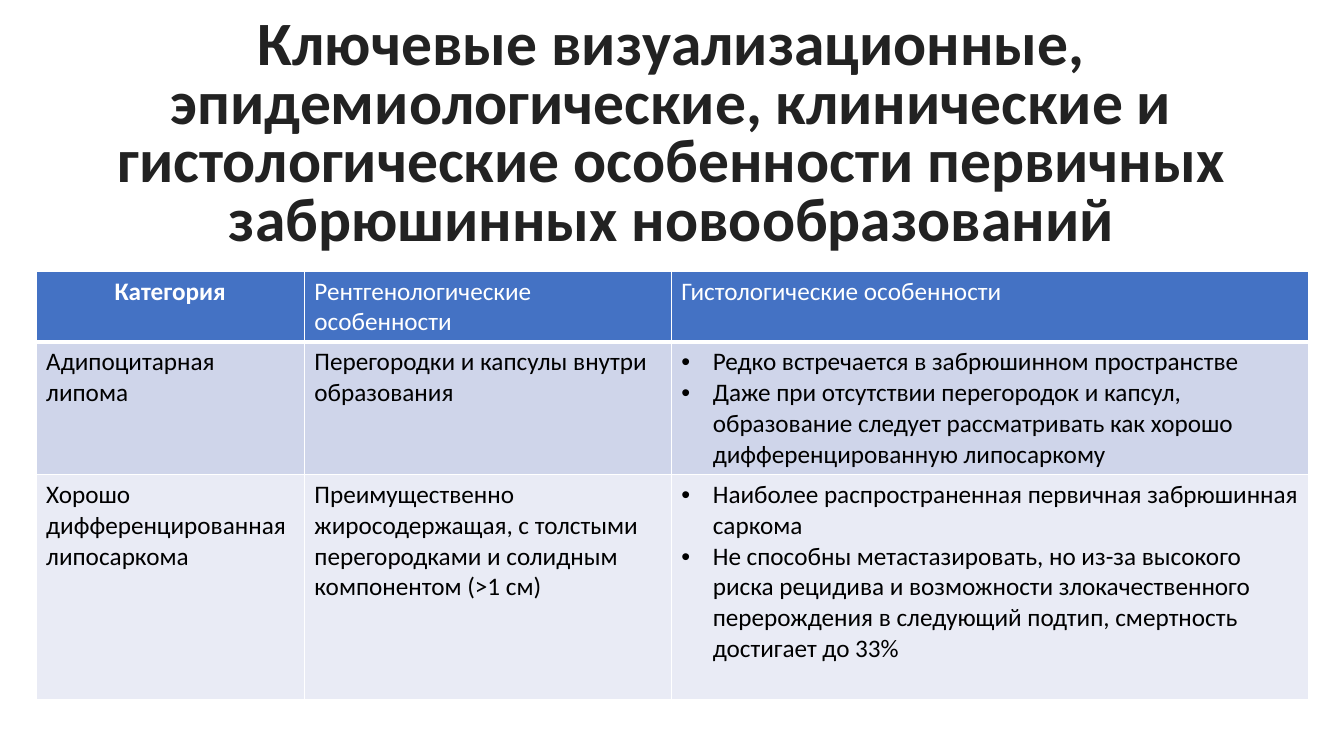
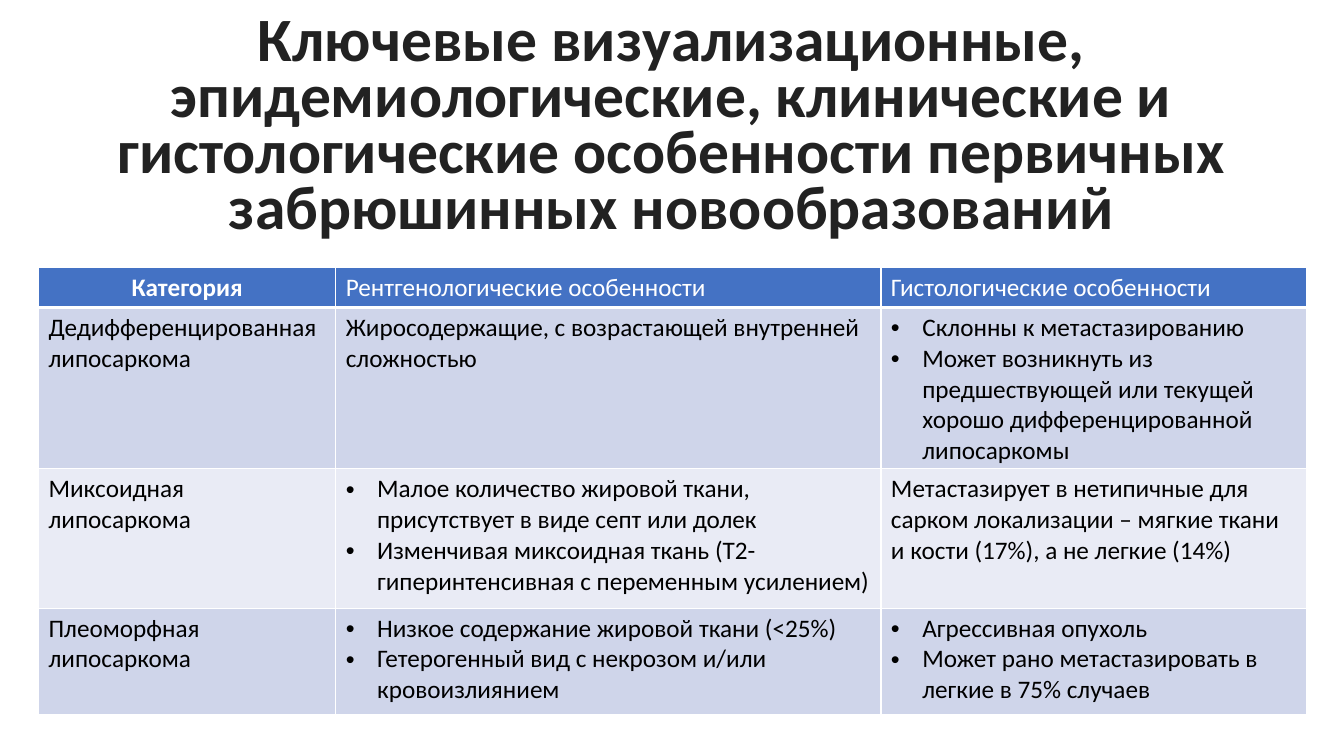
from dataclasses import dataclass

from lxml.etree import SubElement
from pptx import Presentation
from pptx.dml.color import RGBColor
from pptx.enum.text import MSO_ANCHOR, PP_ALIGN
from pptx.oxml.ns import qn
from pptx.util import Cm, Pt

# Shared look
FONT = "Calibri"
INK = RGBColor(0x22, 0x22, 0x22)
BLACK = RGBColor(0, 0, 0)
WHITE = RGBColor(0xFF, 0xFF, 0xFF)
BLUE = RGBColor(0x44, 0x72, 0xC4)
BANDS = (RGBColor(0xE9, 0xEB, 0xF5), RGBColor(0xCF, 0xD5, 0xEA))
INDENT = Cm(0.79)

TITLE = ("Ключевые визуализационные, эпидемиологические, клинические и "
         "гистологические особенности первичных забрюшинных новообразований")
HEADS = ("Категория", "Рентгенологические особенности", "Гистологические особенности")


@dataclass
class Title:
    left: float
    top: float
    width: float
    height: float
    pitch: float
    anchor: MSO_ANCHOR
    inset: bool


@dataclass
class Grid:
    left: float
    top: float
    cols: tuple
    rows: tuple
    body: tuple  # a plain string is a paragraph, a tuple is a bullet list


@dataclass
class Page:
    title: Title
    grid: Grid


PAGES = (
    Page(
        Title(0, 1.6, 33.87, 3.68, 42, MSO_ANCHOR.MIDDLE, False),
        Grid(0.91, 6.83, (6.76, 9.25, 16.05), (1.78, 3.35, 5.66), (
            ("Адипоцитарная липома",
             "Перегородки и капсулы внутри образования",
             ("Редко встречается в забрюшинном пространстве",
              "Даже при отсутствии перегородок и капсул, образование следует "
              "рассматривать как хорошо дифференцированную липосаркому")),
            ("Хорошо дифференцированная липосаркома",
             "Преимущественно жиросодержащая, с толстыми перегородками "
             "и солидным компонентом (>1 см)",
             ("Наиболее распространенная первичная забрюшинная саркома",
              "Не способны метастазировать, но из-за высокого риска рецидива "
              "и возможности злокачественного перерождения в следующий подтип, "
              "смертность достигает до 33%")),
        )),
    ),
    Page(
        Title(0.36, 0.33, 33.15, 6.02, 40, MSO_ANCHOR.TOP, True),
        Grid(0.97, 6.73, (7.49, 13.74, 10.72), (1.02, 4.06, 3.51, 2.67), (
            ("Дедифференцированная липосаркома",
             "Жиросодержащие, с возрастающей внутренней сложностью",
             ("Склонны к метастазированию",
              "Может возникнуть из предшествующей или текущей "
              "хорошо дифференцированной липосаркомы")),
            ("Миксоидная липосаркома",
             ("Малое количество жировой ткани, присутствует в виде септ или долек",
              "Изменчивая миксоидная ткань (Т2-гиперинтенсивная "
              "с переменным усилением)"),
             "Метастазирует в нетипичные для сарком локализации – "
             "мягкие ткани и кости (17%), а не легкие (14%)"),
            ("Плеоморфная липосаркома",
             ("Низкое содержание жировой ткани (<25%)",
              "Гетерогенный вид с некрозом и/или кровоизлиянием"),
             ("Агрессивная опухоль",
              "Может рано метастазировать в легкие в 75% случаев")),
        )),
    ),
)


def style(para, size: float, color: RGBColor, bold: bool) -> None:
    for run in para.runs:
        font = run.font
        font.name, font.size, font.bold = FONT, Pt(size), bold
        font.color.rgb = color


def bullet(para) -> None:
    props = para._p.get_or_add_pPr()
    props.set("marL", str(INDENT))
    props.set("indent", str(-INDENT))
    SubElement(props, qn("a:buFont"), typeface="Arial")
    SubElement(props, qn("a:buChar"), char="•")


def border(cell, head: bool, first: bool) -> None:
    """Draw white cell edges, with a heavy rule under the header."""
    props = cell._tc.get_or_add_tcPr()
    sides = {"L": 1, "R": 1, "T": 3 if first else 1, "B": 3 if head else 1}
    for side, width in sides.items():
        line = SubElement(props, qn(f"a:ln{side}"), w=str(Pt(width)))
        fill = SubElement(line, qn("a:solidFill"))
        SubElement(fill, qn("a:srgbClr"), val=str(WHITE))


def add_title(slide, spec: Title) -> None:
    box = slide.shapes.add_textbox(
        Cm(spec.left), Cm(spec.top), Cm(spec.width), Cm(spec.height))
    frame = box.text_frame
    frame.word_wrap = True
    frame.vertical_anchor = spec.anchor
    if not spec.inset:
        frame.margin_left = frame.margin_right = 0
        frame.margin_top = frame.margin_bottom = 0
    frame.text = TITLE
    para = frame.paragraphs[0]
    para.alignment = PP_ALIGN.CENTER
    para.line_spacing = Pt(spec.pitch)
    style(para, 44, INK, True)


def fill_cell(cell, value, row: int, col: int) -> None:
    head = row == 0
    border(cell, head, row == 1)
    cell.fill.solid()
    cell.fill.fore_color.rgb = BLUE if head else BANDS[row % 2]
    listed = isinstance(value, tuple)
    cell.text_frame.text = "\n".join(value) if listed else value
    for para in cell.text_frame.paragraphs:
        if listed:
            bullet(para)
        if head and col == 0:
            para.alignment = PP_ALIGN.CENTER
        style(para, 18, WHITE if head else BLACK, head and col == 0)


def add_grid(slide, spec: Grid) -> None:
    table = slide.shapes.add_table(
        len(spec.rows), len(spec.cols), Cm(spec.left), Cm(spec.top),
        Cm(sum(spec.cols)), Cm(sum(spec.rows))).table
    for col, width in zip(table.columns, spec.cols):
        col.width = Cm(width)
    for row, height in zip(table.rows, spec.rows):
        row.height = Cm(height)
    for r, values in enumerate((HEADS, *spec.body)):
        for c, value in enumerate(values):
            fill_cell(table.cell(r, c), value, r, c)


def main() -> None:
    deck = Presentation()
    deck.slide_width, deck.slide_height = Cm(33.87), Cm(19.05)
    for page in PAGES:
        slide = deck.slides.add_slide(deck.slide_layouts[6])
        add_title(slide, page.title)
        add_grid(slide, page.grid)
    deck.save("out.pptx")


if __name__ == "__main__":
    main()
